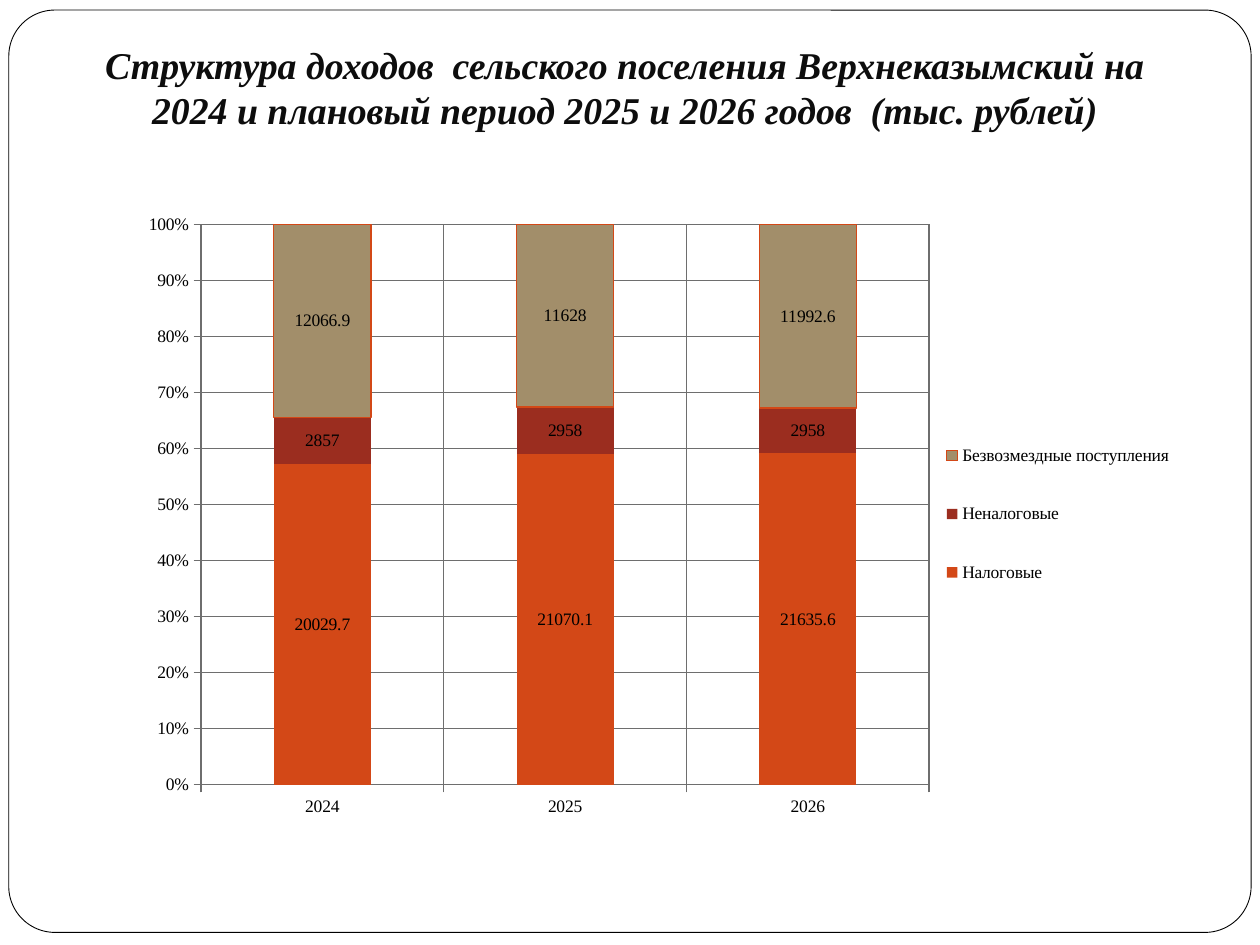
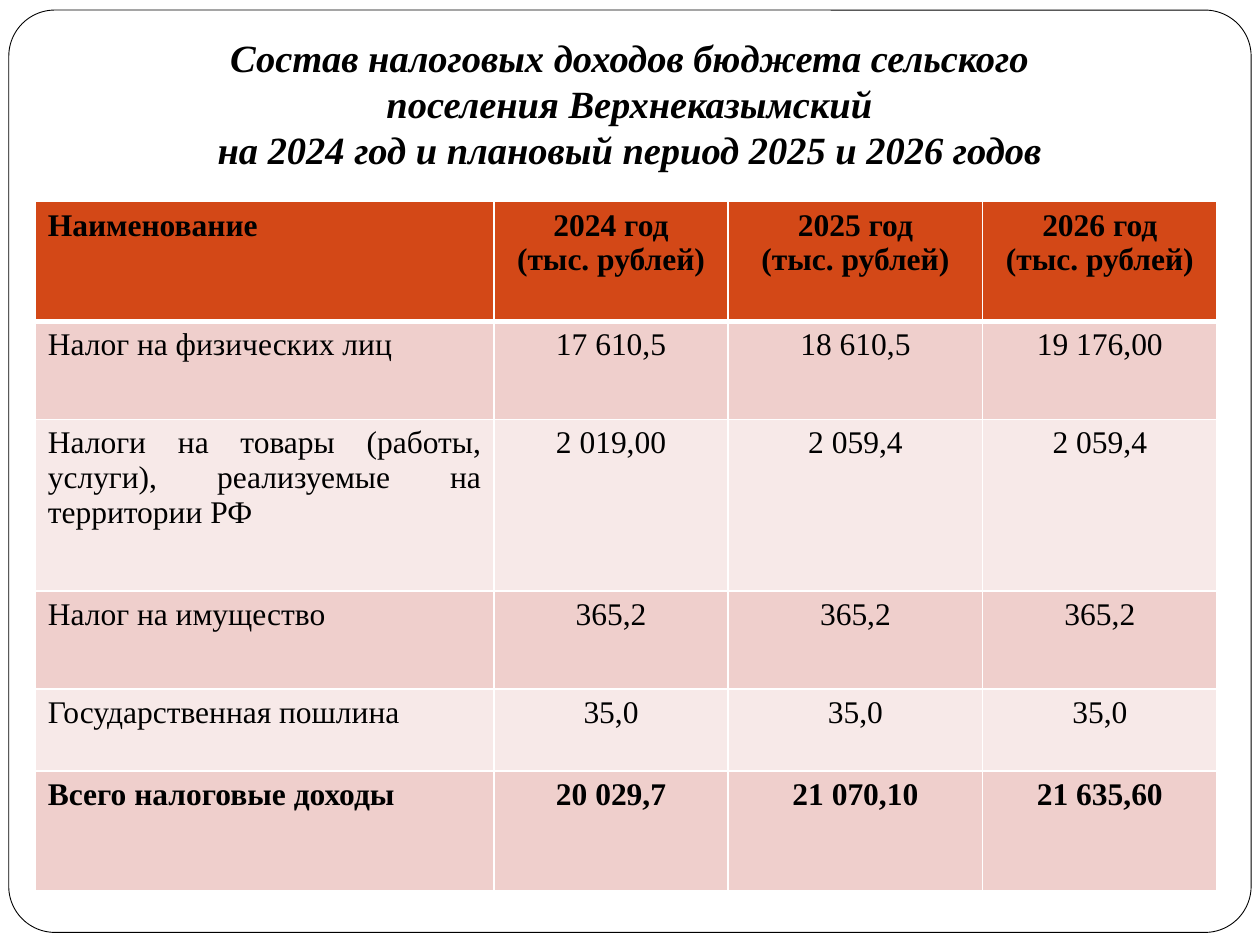
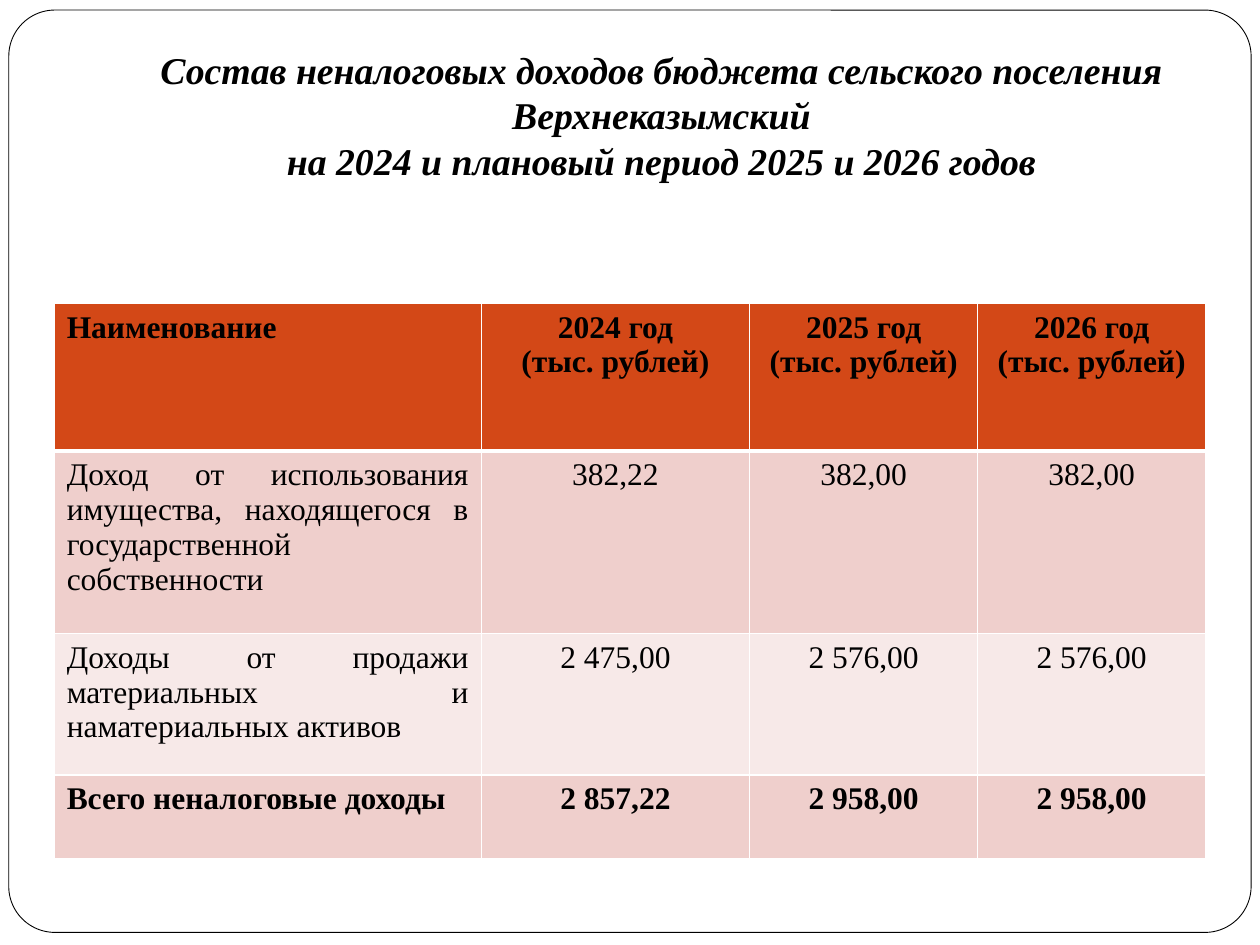
from lxml import etree
from pptx import Presentation
from pptx.chart.data import CategoryChartData
from pptx.dml.color import RGBColor
from pptx.enum.chart import XL_CHART_TYPE, XL_LABEL_POSITION, XL_LEGEND_POSITION, XL_TICK_MARK
from pptx.enum.shapes import MSO_SHAPE
from pptx.enum.text import MSO_ANCHOR, MSO_AUTO_SIZE, PP_ALIGN
from pptx.oxml import parse_xml
from pptx.oxml.ns import nsdecls, qn
from pptx.util import Inches, Pt

STACKED = XL_CHART_TYPE.COLUMN_STACKED_100
LABEL_CENTER = XL_LABEL_POSITION.CENTER
LEGEND_RIGHT = XL_LEGEND_POSITION.RIGHT
TICK_OUT = XL_TICK_MARK.OUTSIDE
ROUND_RECT = MSO_SHAPE.ROUNDED_RECTANGLE
BOTTOM = MSO_ANCHOR.BOTTOM
NO_AUTOFIT = MSO_AUTO_SIZE.NONE
LEFT, CENTER, JUSTIFY = PP_ALIGN.LEFT, PP_ALIGN.CENTER, PP_ALIGN.JUSTIFY

FONT = "Times New Roman"
TITLE_ONLY = 5
COLORS = {
    "white": "FFFFFF", "black": "000000", "title": "0D0D0D", "grid": "6E6E6E",
    "orange": "D34817", "red": "9B2D1F", "sand": "A28E6A",
    "band_dark": "EFCFCC", "band_light": "F7E9E8",
}
YEARS = ["2024", "2025", "2026"]
HEADER = ["Наименование"] + [f"{year} год\n(тыс. рублей)" for year in YEARS]


def rgb(name):
    return RGBColor.from_string(COLORS[name])


class Deck:
    """Shared style and the slide being filled."""

    def __init__(self):
        self.prs = Presentation()
        self.prs.slide_width, self.prs.slide_height = Inches(10), Inches(7.5)
        self.slide = None

    def style(self, font, size, color="black", bold=False, italic=False):
        font.name, font.size = FONT, Pt(size)
        font.bold, font.italic = bold, italic
        font.color.rgb = rgb(color)

    def new_slide(self, title, box, size, color="black"):
        self.slide = self.prs.slides.add_slide(self.prs.slide_layouts[TITLE_ONLY])
        self.frame()
        self.title(title, box, size, color)

    def frame(self):
        border = self.slide.shapes.add_shape(
            ROUND_RECT, Inches(0.07), Inches(0.08), Inches(9.86), Inches(7.32))
        border.adjustments[0] = 0.05
        border.shadow.inherit = False
        border.fill.solid()
        border.fill.fore_color.rgb = rgb("white")
        border.line.color.rgb = rgb("black")
        border.line.width = Pt(0.5)
        # Send behind the title
        self.slide.shapes._spTree.insert(2, border._element)

    def title(self, text, box, size, color):
        heading = self.slide.shapes.title
        heading.left, heading.top, heading.width, heading.height = map(Inches, box)
        body = heading.text_frame
        body.word_wrap, body.auto_size = True, NO_AUTOFIT
        body.vertical_anchor = BOTTOM
        body.margin_left = body.margin_right = body.margin_bottom = Inches(0.1)
        body.margin_top = Inches(0.05)
        paragraph = body.paragraphs[0]
        paragraph.text = text
        paragraph.alignment = CENTER
        self.style(paragraph.font, size, color, bold=True, italic=True)

    def table(self, left, top, widths, heights, rows):
        """First row is the header, last row the total."""
        grid = self.slide.shapes.add_table(
            len(rows), len(widths), Inches(left), Inches(top),
            Inches(sum(widths)), Inches(sum(heights))).table
        for column, width in zip(grid.columns, widths):
            column.width = Inches(width)
        for r, (height, values) in enumerate(zip(heights, rows)):
            grid.rows[r].height = Inches(height)
            fill = "orange" if r == 0 else "band_dark" if r % 2 else "band_light"
            for c, text in enumerate(values):
                align = CENTER if c else JUSTIFY if r else LEFT
                self.cell(grid.cell(r, c), text, fill, align,
                          bold=r in (0, len(rows) - 1),
                          top=3 if r == 1 else 1, bottom=3 if r == 0 else 1)

    def cell(self, cell, text, fill, align, bold, top, bottom):
        cell.text = text
        cell.fill.solid()
        cell.fill.fore_color.rgb = rgb(fill)
        for paragraph in cell.text_frame.paragraphs:
            paragraph.alignment = align
            self.style(paragraph.font, 18, bold=bold)
        borders = {"lnL": 1, "lnR": 1, "lnT": top, "lnB": bottom}
        for i, (side, width) in enumerate(borders.items()):
            cell._tc.get_or_add_tcPr().insert(i, parse_xml(
                f'<a:{side} {nsdecls("a")} w="{Pt(width)}"><a:solidFill>'
                f'<a:srgbClr val="{COLORS["white"]}"/></a:solidFill></a:{side}>'))

    def stacked_chart(self, box, categories, series):
        data = CategoryChartData()
        data.categories = categories
        for name, _, values in series:
            data.add_series(name, values)
        chart = self.slide.shapes.add_chart(STACKED, *map(Inches, box), data).chart
        chart.has_title = False
        self.style(chart.font, 10)

        # Axes and gridlines
        for axis in (chart.category_axis, chart.value_axis):
            axis.major_tick_mark = TICK_OUT
            axis.has_major_gridlines = True
            self.style(axis.tick_labels.font, 10)
            for line in (axis.format.line, axis.major_gridlines.format.line):
                line.color.rgb = rgb("grid")
                line.width = Pt(0.75)
        chart.value_axis.tick_labels.number_format = "0%"
        chart.value_axis.tick_labels.number_format_is_linked = False

        # Bars and their values
        plot = chart.plots[0]
        plot.gap_width, plot.overlap, plot.vary_by_categories = 150, 100, False
        for bars, (_, color, _) in zip(plot.series, series):
            bars.format.fill.solid()
            bars.format.fill.fore_color.rgb = rgb(color)
            labels = bars.data_labels
            labels.show_value, labels.position = True, LABEL_CENTER
            self.style(labels.font, 10)
        outline = plot.series[-1].format.line
        outline.color.rgb = rgb("orange")
        outline.width = Pt(0.75)

        # Legend and placement
        chart.has_legend = True
        chart.legend.position = LEGEND_RIGHT
        chart.legend.include_in_layout = False
        self.style(chart.legend.font, 10)
        plot_area = chart._chartSpace.find(f".//{qn('c:plotArea')}")
        self.place(plot_area, 0, (0.07, 0.04, 0.68, 0.89), inner=True)
        self.place(chart.legend._element, 1, (0.75, 0.33, 0.24, 0.34))

    def place(self, parent, index, fractions, inner=False):
        for old in parent.findall(qn("c:layout")):
            parent.remove(old)
        layout = etree.Element(qn("c:layout"))
        manual = etree.SubElement(layout, qn("c:manualLayout"))
        settings = [("layoutTarget", "inner")] if inner else []
        settings += [("xMode", "edge"), ("yMode", "edge")]
        settings += zip("xywh", fractions)
        for tag, value in settings:
            etree.SubElement(manual, qn(f"c:{tag}")).set("val", str(value))
        parent.insert(index, layout)


def main():
    deck = Deck()

    # Income structure
    deck.new_slide(
        "Структура доходов  сельского поселения Верхнеказымский на "
        "2024 и плановый период 2025 и 2026 годов  (тыс. рублей)",
        (0.43, 0.21, 9.06, 0.94), 21.6, "title")
    deck.stacked_chart((1, 1.58, 8.5, 5), YEARS, [
        ("Налоговые", "orange", (20029.7, 21070.1, 21635.6)),
        ("Неналоговые", "red", (2857, 2958, 2958)),
        ("Безвозмездные поступления", "sand", (12066.9, 11628, 11992.6)),
    ])

    # Tax income
    deck.new_slide(
        "Состав налоговых доходов бюджета сельского\nпоселения Верхнеказымский\n"
        "на 2024 год и плановый период 2025 и 2026 годов",
        (0.5, 0.21, 8.99, 1.26), 22)
    deck.table(0.28, 1.6, (3.64, 1.86, 2.02, 1.86),
               (0.95, 0.78, 1.36, 0.78, 0.65, 0.95), [
        HEADER,
        ("Налог на физических лиц", "17 610,5", "18 610,5", "19 176,00"),
        ("Налоги на товары (работы, услуги), реализуемые на территории РФ",
         "2 019,00", "2 059,4", "2 059,4"),
        ("Налог на имущество", "365,2", "365,2", "365,2"),
        ("Государственная пошлина", "35,0", "35,0", "35,0"),
        ("Всего налоговые доходы", "20 029,7", "21 070,10", "21 635,60"),
    ])

    # Non-tax income
    deck.new_slide(
        "Состав неналоговых доходов бюджета сельского поселения Верхнеказымский\n"
        "на 2024 и плановый период 2025 и 2026 годов",
        (1, 0.3, 8.5, 1.25), 21.6)
    deck.table(0.43, 2.41, (3.39, 2.13, 1.81, 1.81), (1.17, 1.45, 1.12, 0.67), [
        HEADER,
        ("Доход от использования имущества, находящегося в государственной "
         "собственности", "382,22", "382,00", "382,00"),
        ("Доходы от продажи материальных и наматериальных активов",
         "2 475,00", "2 576,00", "2 576,00"),
        ("Всего неналоговые доходы", "2 857,22", "2 958,00", "2 958,00"),
    ])

    deck.prs.save("out.pptx")


if __name__ == "__main__":
    main()
